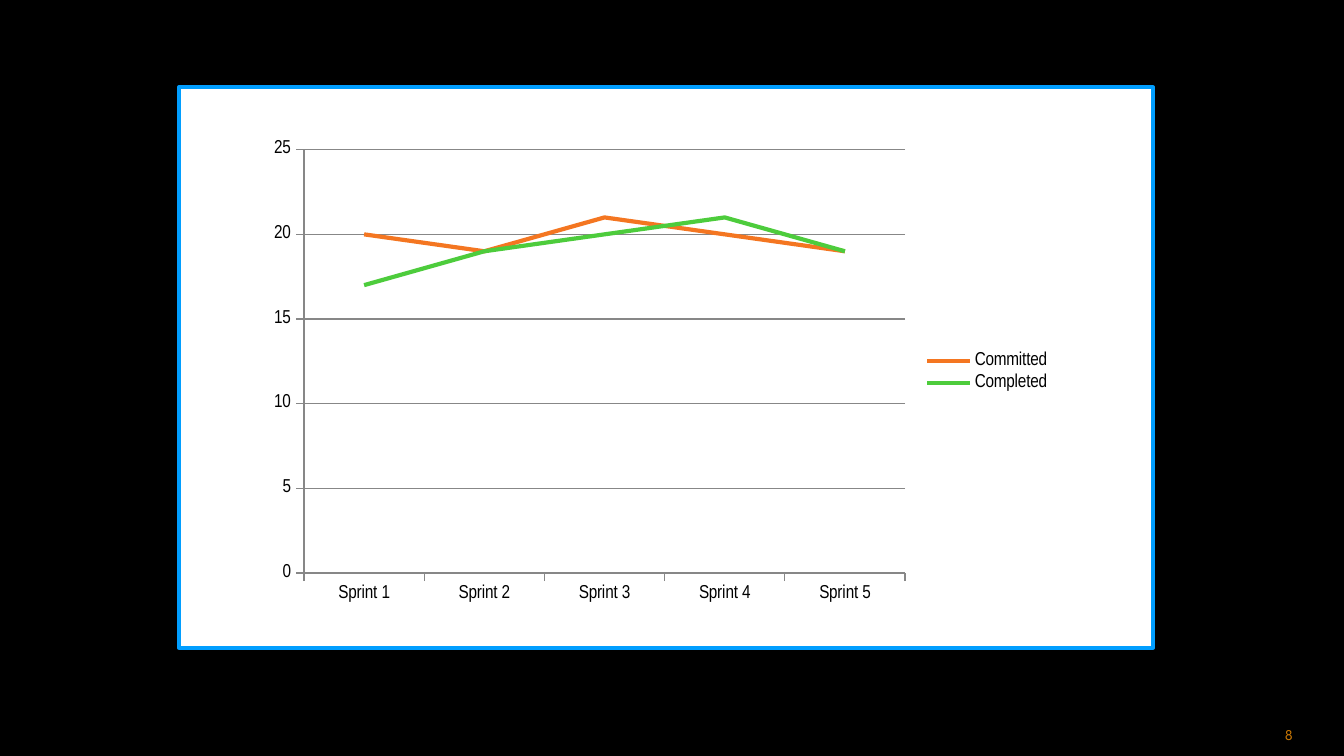
from dataclasses import dataclass

from pptx import Presentation
from pptx.chart.data import CategoryChartData
from pptx.dml.color import RGBColor
from pptx.enum.chart import XL_CHART_TYPE, XL_LEGEND_POSITION, XL_TICK_MARK
from pptx.enum.shapes import MSO_SHAPE
from pptx.enum.text import MSO_ANCHOR, PP_ALIGN
from pptx.util import Inches, Pt

LINE_CHART = XL_CHART_TYPE.LINE
LEGEND_RIGHT = XL_LEGEND_POSITION.RIGHT
TICK_OUTSIDE = XL_TICK_MARK.OUTSIDE
TICK_NONE = XL_TICK_MARK.NONE
RECTANGLE = MSO_SHAPE.RECTANGLE
MIDDLE = MSO_ANCHOR.MIDDLE
CENTER = PP_ALIGN.CENTER


@dataclass(frozen=True)
class Theme:
    background: str = "000000"
    panel: str = "FFFFFF"
    border: str = "019EFF"
    page_number: str = "CA7805"
    chart_text: str = "000000"
    axis: str = "878787"
    committed: str = "F47621"
    completed: str = "4DCC3C"
    chart_font: str = "Arial Narrow"
    number_font: str = "League Spartan"
    chart_size: int = 10
    number_size: int = 8


THEME = Theme()

SPRINTS = [f"Sprint {number}" for number in range(1, 6)]
SERIES = [
    ("Committed", (20, 19, 21, 20, 19), THEME.committed),
    ("Completed", (17, 19, 20, 21, 19), THEME.completed),
]


def color(value):
    return RGBColor.from_string(value)


def style_font(font, name, size, value):
    font.name = name
    font.size = Pt(size)
    font.color.rgb = color(value)


def style_line(line, value, width):
    line.color.rgb = color(value)
    line.width = Pt(width)


def add_text(slide, text, left, top, width, height, *, font, size, value, align):
    box = slide.shapes.add_textbox(
        Inches(left), Inches(top), Inches(width), Inches(height)
    )
    frame = box.text_frame
    frame.word_wrap = True
    frame.vertical_anchor = MIDDLE
    frame.margin_left = frame.margin_right = 0
    frame.margin_top = frame.margin_bottom = 0
    paragraph = frame.paragraphs[0]
    paragraph.alignment = align
    run = paragraph.add_run()
    run.text = text
    style_font(run.font, font, size, value)


def add_panel(slide, left, top, width, height):
    panel = slide.shapes.add_shape(
        RECTANGLE, Inches(left), Inches(top), Inches(width), Inches(height)
    )
    panel.shadow.inherit = False
    panel.fill.solid()
    panel.fill.fore_color.rgb = color(THEME.panel)
    style_line(panel.line, THEME.border, 2)


def add_sprint_chart(slide, left, top, width, height):
    data = CategoryChartData()
    data.categories = SPRINTS
    for name, values, _ in SERIES:
        data.add_series(name, values)
    chart = slide.shapes.add_chart(
        LINE_CHART, Inches(left), Inches(top), Inches(width), Inches(height), data
    ).chart
    style_font(chart.font, THEME.chart_font, THEME.chart_size, THEME.chart_text)
    chart.has_title = False
    chart.has_legend = True
    chart.legend.position = LEGEND_RIGHT
    chart.legend.include_in_layout = False

    for axis in (chart.category_axis, chart.value_axis):
        axis.major_tick_mark = TICK_OUTSIDE
        axis.minor_tick_mark = TICK_NONE
        style_line(axis.format.line, THEME.axis, 0.75)
    chart.value_axis.minimum_scale = 0
    chart.value_axis.has_major_gridlines = True
    style_line(chart.value_axis.major_gridlines.format.line, THEME.axis, 0.75)

    plot = chart.plots[0]
    plot.vary_by_categories = False
    for series, (_, _, value) in zip(plot.series, SERIES):
        series.smooth = False
        style_line(series.format.line, value, 2.25)


def main():
    presentation = Presentation()
    presentation.slide_width = Inches(10)
    presentation.slide_height = Inches(10 * 9 / 16)
    slide = presentation.slides.add_slide(presentation.slide_layouts[6])
    slide.background.fill.solid()
    slide.background.fill.fore_color.rgb = color(THEME.background)

    add_text(
        slide, "8", 9.33, 5.39, 0.52, 0.15,
        font=THEME.number_font, size=THEME.number_size,
        value=THEME.page_number, align=CENTER,
    )
    add_panel(slide, 1.33, 0.65, 7.25, 4.17)
    add_sprint_chart(slide, 1.92, 0.98, 6, 3.58)
    presentation.save("out.pptx")


if __name__ == "__main__":
    main()
